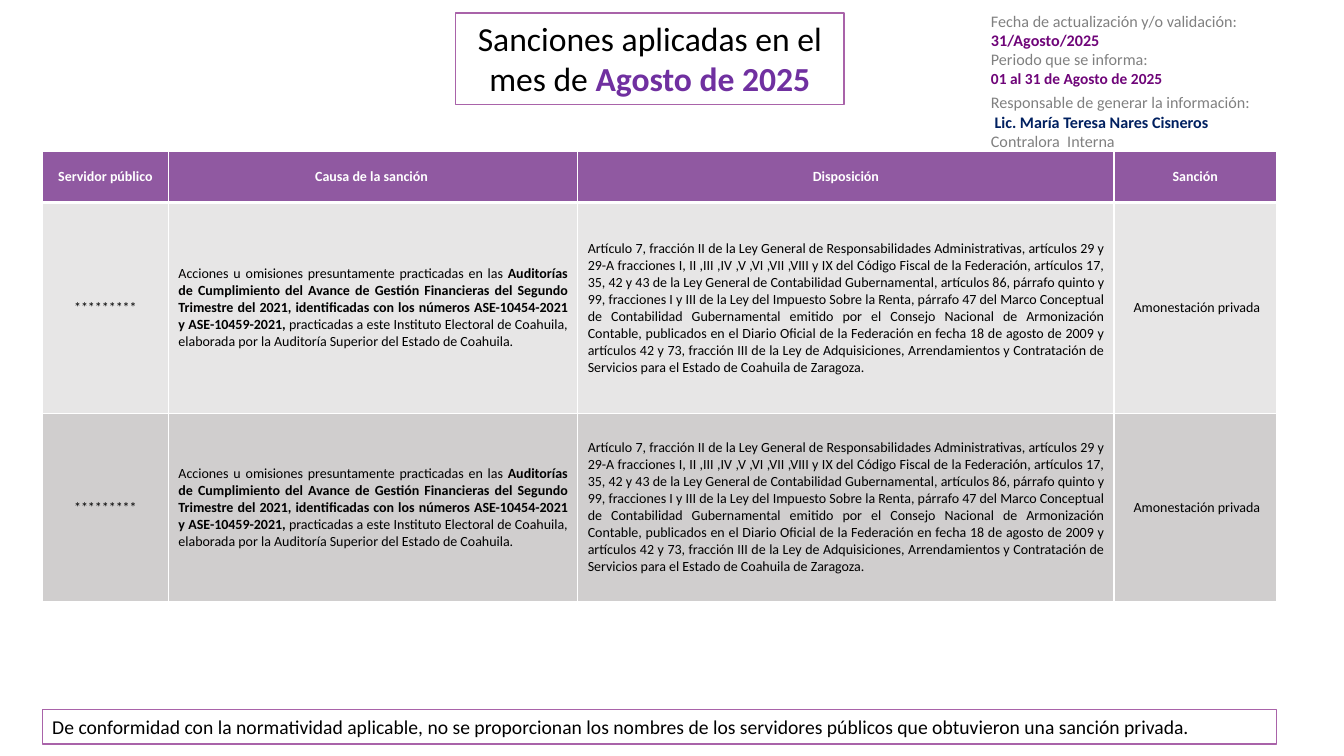
from lxml import etree
from pptx import Presentation
from pptx.dml.color import RGBColor
from pptx.enum.shapes import MSO_SHAPE
from pptx.enum.text import MSO_ANCHOR, MSO_AUTO_SIZE, PP_ALIGN
from pptx.oxml.ns import qn
from pptx.util import Inches, Pt

RECT = MSO_SHAPE.RECTANGLE
TOP, MIDDLE = MSO_ANCHOR.TOP, MSO_ANCHOR.MIDDLE
GROW = MSO_AUTO_SIZE.SHAPE_TO_FIT_TEXT
LEFT, CENTER, JUSTIFY = PP_ALIGN.LEFT, PP_ALIGN.CENTER, PP_ALIGN.JUSTIFY

WHITE, BLACK, GRAY = "FFFFFF", "000000", "808080"
FRAME, HEAD, PURPLE, PLUM, NAVY = "A963A9", "9059A1", "7030A0", "6F0579", "002060"
BANDS = ("E7E6E6", "D0CECE")

COLS = (1.25, 4.06, 5.32, 1.61)
ROWS = (0.51, 2.09, 1.87)
TITLES = ("Servidor público", "Causa de la sanción ", "Disposición", "Sanción")
ALIGNS = (CENTER, JUSTIFY, JUSTIFY, CENTER)
CAUSE = (
    ("Acciones u omisiones presuntamente practicadas en las ", {}),
    ("Auditorías de Cumplimiento del Avance de Gestión Financieras del Segundo "
     "Trimestre del 2021, identificadas con los números ASE-10454-2021 "
     "y ASE-10459-2021, ", {"bold": True}),
    ("practicadas a este Instituto Electoral de Coahuila, elaborada por la "
     "Auditoría Superior del Estado de Coahuila.", {}),
)
RULE = (
    "Artículo 7, fracción II de la Ley General de Responsabilidades Administrativas, "
    "artículos 29 y 29-A fracciones I, II ,III ,IV ,V ,VI ,VII ,VIII y IX del Código "
    "Fiscal de la Federación, artículos 17, 35, 42 y 43 de la Ley General de "
    "Contabilidad Gubernamental, artículos 86, párrafo quinto y 99, fracciones I y III "
    "de la Ley del Impuesto Sobre la Renta, párrafo 47 del Marco Conceptual de "
    "Contabilidad Gubernamental emitido por el Consejo Nacional de Armonización "
    "Contable, publicados en el Diario Oficial de la Federación en fecha 18 de agosto "
    "de 2009 y artículos 42 y 73, fracción III de la Ley de Adquisiciones, "
    "Arrendamientos y Contratación de Servicios para el Estado de Coahuila de Zaragoza."
)
CASE = (
    (("*********", {}),),
    CAUSE,
    ((RULE, {}),),
    ((" Amonestación privada", {}),),
)


def color(code):
    return RGBColor.from_string(code)


class Page:
    """Holds the slide and the base text style."""

    def __init__(self, slide, font):
        self.slide = slide
        self.base = {"name": font, "bold": False, "color": BLACK}

    def put(self, frame, lines, align=LEFT, **style):
        """Fill a text frame; each line is a sequence of (text, style) runs."""
        for n, line in enumerate(lines):
            para = frame.paragraphs[0] if n == 0 else frame.add_paragraph()
            para.alignment = align
            for text, extra in line:
                run = para.add_run()
                run.text = text
                for key, value in {**self.base, **style, **extra}.items():
                    if key == "color":
                        run.font.color.rgb = color(value)
                    else:
                        setattr(run.font, key, value)

    def setup(self, frame, **values):
        for key, value in {"word_wrap": True, "auto_size": GROW, **values}.items():
            setattr(frame, key, value)

    def label(self, spot, lines, wrap=True, **style):
        box = self.slide.shapes.add_textbox(*map(Inches, spot))
        self.setup(box.text_frame, word_wrap=wrap)
        self.put(box.text_frame, lines, **style)

    def panel(self, spot, lines, **style):
        box = self.slide.shapes.add_shape(RECT, *map(Inches, spot))
        box.shadow.inherit = False
        box.fill.solid()
        box.fill.fore_color.rgb = color(WHITE)
        box.line.color.rgb = color(FRAME)
        box.line.width = Pt(1)
        self.setup(box.text_frame, vertical_anchor=TOP)
        self.put(box.text_frame, lines, **style)

    def border(self, cell, side, width):
        props = cell._tc.get_or_add_tcPr()
        line = etree.SubElement(props, qn("a:ln" + side), w=str(Pt(width)))
        fill = etree.SubElement(line, qn("a:solidFill"))
        etree.SubElement(fill, qn("a:srgbClr"), val=WHITE)

    def cell(self, cell, line, fill, top=1, base=1, **style):
        """Fill one cell; top and base are widths of its borders."""
        for side, width in zip("LRTB", (1, 1, top, base)):
            self.border(cell, side, width)
        cell.fill.solid()
        cell.fill.fore_color.rgb = color(fill)
        cell.vertical_anchor = MIDDLE
        self.put(cell.text_frame, [line], size=Pt(10), **style)

    def table(self, left, top):
        size = map(Inches, (left, top, sum(COLS), sum(ROWS)))
        grid = self.slide.shapes.add_table(len(ROWS), len(COLS), *size).table
        for row, height in zip(grid.rows, ROWS):
            row.height = Inches(height)
        for c, width in enumerate(COLS):
            grid.columns[c].width = Inches(width)
            self.cell(grid.cell(0, c), [(TITLES[c], {})], HEAD, base=3,
                      align=CENTER, color=WHITE, bold=True)
            for r, band in enumerate(BANDS, 1):
                self.cell(grid.cell(r, c), CASE[c], band, top=3 if r == 1 else 1,
                          align=ALIGNS[c])


def main():
    deck = Presentation()
    deck.slide_width, deck.slide_height = Inches(13.33), Inches(7.5)
    page = Page(deck.slides.add_slide(deck.slide_layouts[6]), "Calibri")

    page.panel((0.42, 7.04, 12.24, 0.34), [[(
        "De conformidad con la normatividad aplicable, no se proporcionan los nombres "
        "de los servidores públicos que obtuvieron una sanción privada.", {})]],
        size=Pt(14))
    page.table(0.42, 1.5)
    page.panel((4.52, 0.13, 3.85, 0.91), [[
        ("Sanciones aplicadas en el mes de ", {}),
        ("Agosto de 2025", {"color": PURPLE, "bold": True})]],
        align=CENTER, size=Pt(24))

    note = {"size": Pt(11.5), "color": GRAY}
    date = {"color": PLUM, "bold": True}
    page.label((9.73, 0.06, 2.71, 1.06), [
        [("Fecha de actualización y/o validación:", {})],
        [("31/Agosto/2025", date)],
        [("Periodo que se informa:", {})],
        [("01 al 31 de Agosto de 2025", {**date, "size": Pt(11)})]],
        wrap=False, **note)
    page.label((9.73, 0.87, 2.96, 0.68), [
        [("Responsable de generar la información:", {})],
        [(" ", {}),
         ("Lic. María Teresa Nares Cisneros", {"color": NAVY, "bold": True})],
        [("Contralora  Interna", {})]], **note)

    deck.save("out.pptx")


if __name__ == "__main__":
    main()
